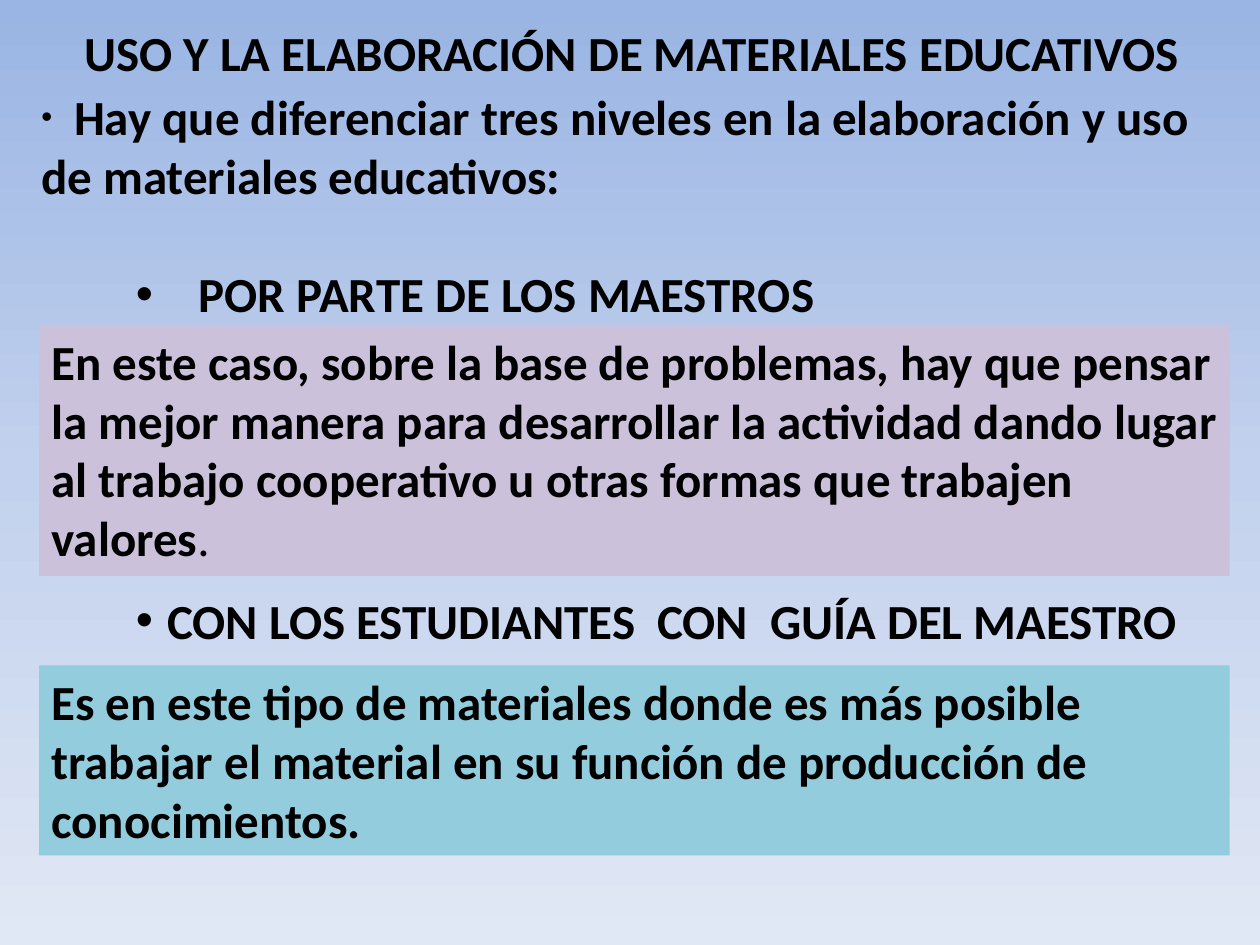
from copy import deepcopy

from lxml import etree
from pptx import Presentation
from pptx.dml.color import RGBColor
from pptx.enum import shapes, text
from pptx.oxml import ns
from pptx.util import Inches, Pt

BLACK = RGBColor(0x00, 0x00, 0x00)
LILAC = RGBColor(0xCC, 0xC1, 0xDA)
TEAL = RGBColor(0x93, 0xCD, 0xDD)
SKY = [
    (0, RGBColor(0x9A, 0xB5, 0xE4)),
    (0.5, RGBColor(0xC2, 0xD1, 0xED)),
    (1, RGBColor(0xE1, 0xE8, 0xF5)),
]


def paint_background(slide):
    fill = slide.background.fill
    fill.gradient()
    fill.gradient_angle = 270
    stop_list = fill._fill._gradFill.gsLst
    stop_list.append(deepcopy(stop_list[0]))
    for stop, (position, color) in zip(fill.gradient_stops, SKY):
        stop.position = position
        stop.color.rgb = color


def style_paragraph(paragraph):
    paragraph.alignment = text.PP_ALIGN.LEFT
    font = paragraph.font
    font.name, font.size, font.bold = "Calibri", Pt(28), True
    font.color.rgb = BLACK


def add_bullet(paragraph, margin, indent, tab=None, size=100):
    """Bullet the paragraph; tab is the first tab stop, size a percentage."""
    properties = paragraph._p.get_or_add_pPr()
    properties.set("marL", str(Inches(margin)))
    properties.set("indent", str(Inches(indent)))
    parts = [
        ("a:buSzPct", {"val": str(size * 1000)}),
        ("a:buFont", {"typeface": "Arial"}),
        ("a:buChar", {"char": "•"}),
    ]
    if tab is not None:
        parts.append(("a:tabLst", {}))
    elements = [etree.Element(ns.qn(tag), attributes) for tag, attributes in parts]
    if tab is not None:
        etree.SubElement(elements[-1], ns.qn("a:tab"), pos=str(Inches(tab)), algn="l")
    # These parts come before the default run properties in the schema.
    defaults = properties.find(ns.qn("a:defRPr"))
    for element in elements:
        defaults.addprevious(element)


def add_title(slide, left, top, width, height):
    frame = slide.shapes.add_textbox(left, top, width, height).text_frame
    frame.word_wrap = True
    frame.margin_left = Inches(0.2)
    frame.margin_top = Inches(0.1)
    paragraph = frame.paragraphs[0]
    paragraph.text = "USO Y LA ELABORACIÓN DE MATERIALES EDUCATIVOS"
    style_paragraph(paragraph)


def add_levels(slide, left, top, width, height):
    """Introduction and level headings, spaced to leave room for the panels."""
    frame = slide.shapes.add_textbox(left, top, width, height).text_frame
    frame.word_wrap = True
    items = [
        ("\tHay que diferenciar tres niveles en la elaboración y uso "
         "de materiales educativos:", 0, (0, 0, 0.26, 64)),
        ("POR PARTE DE LOS MAESTROS", 34, (1.25, -0.5)),
        ("CON LOS ESTUDIANTES  CON  GUÍA DEL MAESTRO", 153, (1, -0.25)),
    ]
    for index, (wording, space, bullet) in enumerate(items):
        paragraph = frame.add_paragraph() if index else frame.paragraphs[0]
        paragraph.text = wording
        paragraph.space_before = Pt(space)
        style_paragraph(paragraph)
        add_bullet(paragraph, *bullet)


def add_panel(slide, left, top, width, height, color, wording):
    panel = slide.shapes.add_shape(
        shapes.MSO_SHAPE.RECTANGLE, left, top, width, height)
    panel.shadow.inherit = False
    panel.fill.solid()
    panel.fill.fore_color.rgb = color
    panel.line.fill.background()
    frame = panel.text_frame
    frame.word_wrap = True
    frame.vertical_anchor = text.MSO_ANCHOR.TOP
    paragraph = frame.paragraphs[0]
    paragraph.text = wording
    style_paragraph(paragraph)
    return paragraph


def main():
    presentation = Presentation()
    presentation.slide_width = Inches(10)
    presentation.slide_height = Inches(7.5)
    slide = presentation.slides.add_slide(presentation.slide_layouts[6])
    paint_background(slide)

    add_title(slide, Inches(0.47), Inches(0.08), Inches(9.22), Inches(0.64))
    add_levels(slide, Inches(0.23), Inches(0.64), Inches(9.45), Inches(4.6))
    teachers = add_panel(
        slide, Inches(0.31), Inches(2.58), Inches(9.45), Inches(1.99), LILAC,
        "En este caso, sobre la base de problemas, hay que pensar la mejor "
        "manera para desarrollar la actividad dando lugar al trabajo "
        "cooperativo u otras formas que trabajen valores")
    period = teachers.add_run()
    period.text = "."
    period.font.bold = False
    add_panel(
        slide, Inches(0.31), Inches(5.28), Inches(9.45), Inches(1.51), TEAL,
        "Es en este tipo de materiales donde es más posible trabajar el "
        "material en su función de producción de conocimientos.")

    presentation.save("out.pptx")


if __name__ == "__main__":
    main()
